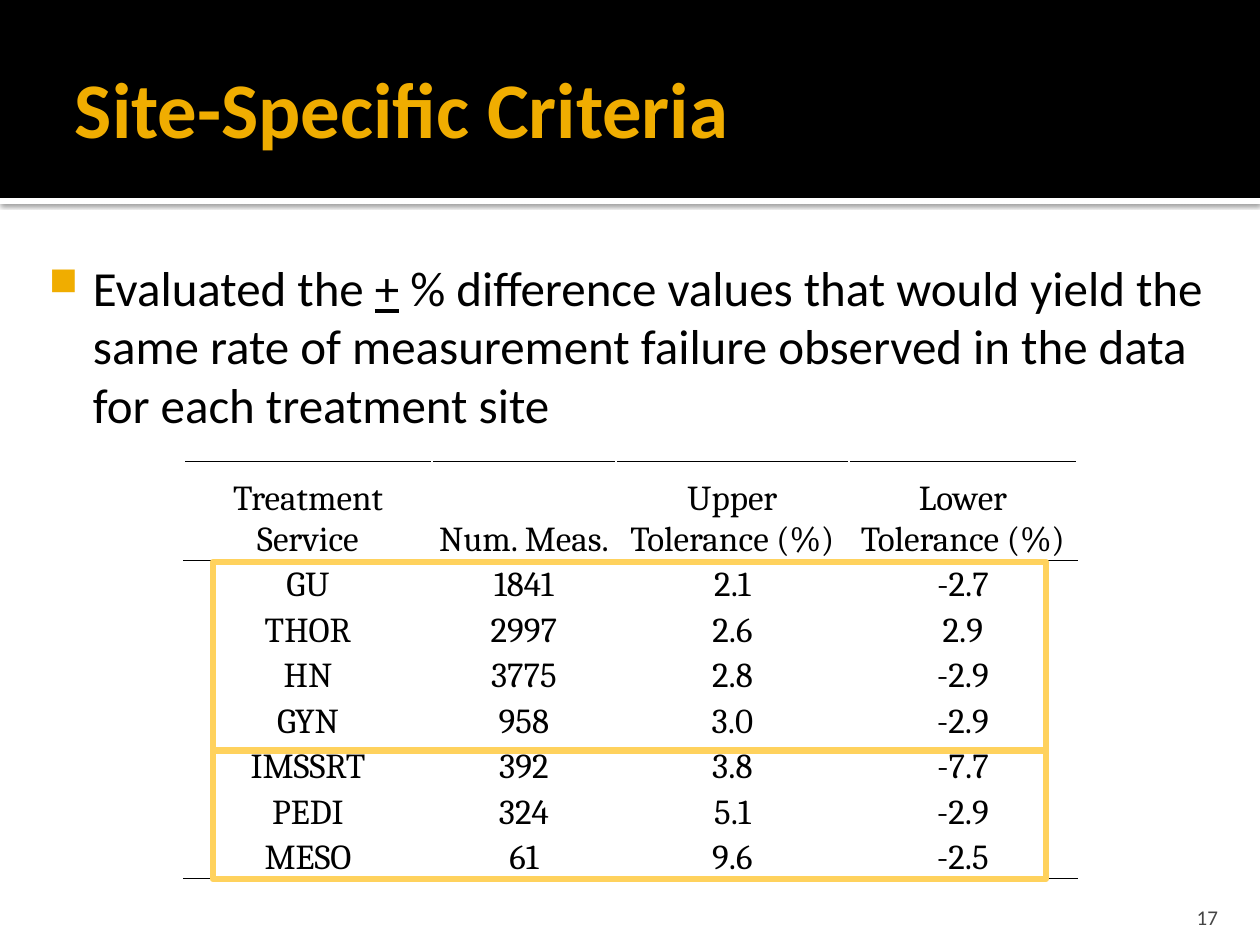
from dataclasses import dataclass

from pptx import Presentation
from pptx.dml.color import RGBColor
from pptx.enum.shapes import MSO_SHAPE
from pptx.enum.text import MSO_ANCHOR, PP_ALIGN
from pptx.oxml import parse_xml
from pptx.oxml.ns import nsdecls
from pptx.util import Emu, Pt

RECT = MSO_SHAPE.RECTANGLE
TOP, MIDDLE, BOTTOM = MSO_ANCHOR.TOP, MSO_ANCHOR.MIDDLE, MSO_ANCHOR.BOTTOM
CENTER, RIGHT = PP_ALIGN.CENTER, PP_ALIGN.RIGHT


@dataclass(frozen=True)
class Theme:
    black: str = "000000"
    white: str = "FFFFFF"
    gold: str = "F0AD00"
    frame: str = "FFD25D"
    gray: str = "454545"
    sans: str = "Calibri"
    serif: str = "Cambria"
    title: int = 45
    body: int = 28
    cell: int = 20
    small: int = 12
    rule: float = 0.5
    edge: float = 3.78


THEME = Theme()
HEADS = ["Treatment Service", "Num. Meas.", "Upper Tolerance (%)", "Lower Tolerance (%)"]
SITES = [
    ["GU", "1841", "2.1", "-2.7"],
    ["THOR", "2997", "2.6", "2.9"],
    ["HN", "3775", "2.8", "-2.9"],
    ["GYN", "958", "3.0", "-2.9"],
    ["IMSSRT", "392", "3.8", "-7.7"],
    ["PEDI", "324", "5.1", "-2.9"],
    ["MESO", "61", "9.6", "-2.5"],
]
CLAIM = [
    "Evaluated the ",
    "+",
    " % difference values that would yield the same rate of measurement"
    " failure observed in the data for each treatment site",
]


def px(n):
    return Emu(round(n * 914400 / 126))


def place(box):
    return [px(n) for n in box]


def style(run, face, size, color, bold=False):
    run.font.name = face
    run.font.size = Pt(size)
    run.font.bold = bold
    run.font.color.rgb = RGBColor.from_string(color)


def add_box(slide, box, fill=None, line=None):
    shape = slide.shapes.add_shape(RECT, *place(box))
    shape.shadow.inherit = False
    if fill:
        shape.fill.solid()
        shape.fill.fore_color.rgb = RGBColor.from_string(fill)
    else:
        shape.fill.background()
    if line:
        shape.line.color.rgb = RGBColor.from_string(line)
        shape.line.width = Pt(THEME.edge)
    else:
        shape.line.fill.background()
    return shape


def add_text(slide, box, pads, anchor):
    """Add a wrapping text box; pads run left, top, right, bottom."""
    frame = slide.shapes.add_textbox(*place(box)).text_frame
    frame.word_wrap = True
    frame.vertical_anchor = anchor
    (frame.margin_left, frame.margin_top,
     frame.margin_right, frame.margin_bottom) = place(pads)
    return frame


def add_header(slide, box):
    x, y, w, h = box
    strip = add_box(slide, (x, y + h, w, 6), THEME.white)
    effects = strip.element.spPr.find("{*}effectLst")
    effects.append(parse_xml(
        f'<a:outerShdw {nsdecls("a")} blurRad="{Pt(2.5)}" dist="{Pt(0.8)}"'
        f' dir="5400000" rotWithShape="0"><a:srgbClr val="{THEME.black}">'
        '<a:alpha val="60000"/></a:srgbClr></a:outerShdw>'))
    add_box(slide, box, THEME.black)
    frame = add_text(slide, (x + 63, y + 21, w - 126, 173), (12, 6, 6, 6), MIDDLE)
    frame.text = "Site-Specific Criteria"
    style(frame.paragraphs[0].runs[0], THEME.sans, THEME.title, THEME.gold, True)


def add_claim(slide, box):
    para = add_text(slide, box, (8, 13, 13, 6), TOP).paragraphs[0]
    for text in CLAIM:
        run = para.add_run()
        run.text = text
        style(run, THEME.sans, THEME.body, THEME.black)
        run.font.underline = text == "+"
    props = para._p.get_or_add_pPr()
    props.set("marL", str(px(60)))
    props.set("indent", str(px(-44)))
    for mark in (f'buClr {nsdecls("a")}><a:srgbClr val="{THEME.gold}"/></a:buClr>',
                 f'buSzPct {nsdecls("a")} val="80000"/>',
                 f'buChar {nsdecls("a")} char="■"/>'):
        props.append(parse_xml("<a:" + mark))


def add_rule(cell, side):
    """Draw the cell's top (T) or bottom (B) border."""
    cell._tc.get_or_add_tcPr().append(parse_xml(
        f'<a:ln{side} {nsdecls("a")} w="{Pt(THEME.rule)}"><a:solidFill>'
        f'<a:srgbClr val="{THEME.black}"/></a:solidFill></a:ln{side}>'))


def fill_cell(cell, text, sides):
    for side in sides:
        add_rule(cell, side)
    cell.fill.background()
    cell.vertical_anchor = BOTTOM
    cell.margin_left = cell.margin_top = cell.margin_right = px(1)
    cell.margin_bottom = 0
    cell.text = text
    para = cell.text_frame.paragraphs[0]
    para.alignment = CENTER
    style(para.runs[0], THEME.serif, THEME.cell, THEME.black)


def add_sites(slide, box):
    x, y, w, h = box
    head, last = 99, len(SITES)
    step = (h - head) / last
    table = slide.shapes.add_table(last + 1, len(HEADS), *place(box)).table
    table.first_row = table.horz_banding = False
    for col, wide in zip(table.columns, (248, 184, 233, 228)):
        col.width = px(wide)
    rules = {0: "TB", 1: "T", last: "B"}
    for i, texts in enumerate([HEADS] + SITES):
        table.rows[i].height = px(step if i else head)
        for j, text in enumerate(texts):
            fill_cell(table.cell(i, j), text, rules.get(i, ""))
    for top, tall in ((101, 189), (289, 129)):
        add_box(slide, (x + 29, y + top, w - 60, tall), line=THEME.frame)


def add_number(slide, box):
    frame = add_text(slide, box, (13, 6, 13, 0), BOTTOM)
    frame.text = "17"
    para = frame.paragraphs[0]
    para.alignment = RIGHT
    style(para.runs[0], THEME.sans, THEME.small, THEME.gray)


def main():
    deck = Presentation()
    deck.slide_width, deck.slide_height = px(1260), px(945)
    slide = deck.slides.add_slide(deck.slide_layouts[6])
    add_header(slide, (0, 0, 1260, 198))
    add_claim(slide, (25, 244, 1211, 218))
    add_sites(slide, (184, 461, 893, 418))
    add_number(slide, (1130, 892, 101, 38))
    deck.save("out.pptx")


if __name__ == "__main__":
    main()
